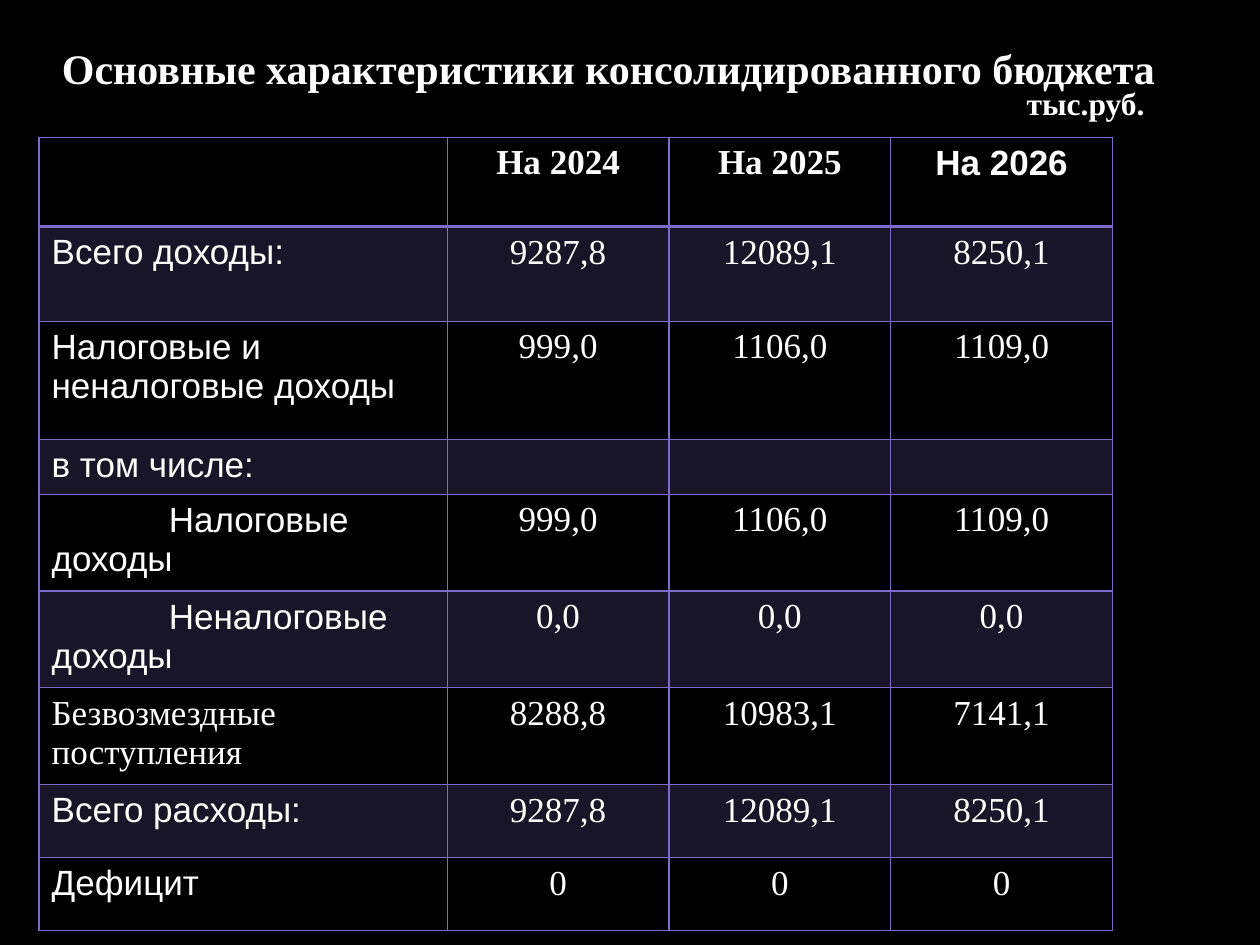
import lxml.etree
import pptx
import pptx.dml.color
import pptx.enum.text
import pptx.oxml.ns
import pptx.util
from pptx.util import Inches

TITLE = "Основные характеристики консолидированного бюджета"
UNIT = "тыс.руб."

SERIF, SANS = "Times New Roman", "Arial"
THEME = {
    "background": "000000",
    "text": "FFFFFF",
    "accent": "7E6BC9",
    "band_alpha": 20,
    "title_size": 24,
    "unit_size": 18,
    "table_size": 20,
}

HEADER = [("На 2024", SERIF), ("На 2025", SERIF), ("На 2026", SANS)]
# label, label font, first-line indent, row height, values by year
BUDGET = [
    ("Всего доходы:", SANS, 0, 0.75, ("9287,8", "12089,1", "8250,1")),
    ("Налоговые и неналоговые доходы", SANS, 0, 0.94, ("999,0", "1106,0", "1109,0")),
    ("в том числе:", SANS, 0, 0.41, ("", "", "")),
    ("Налоговые доходы", SANS, 0.93, 0.72, ("999,0", "1106,0", "1109,0")),
    ("Неналоговые доходы", SANS, 0.93, 0.72, ("0,0", "0,0", "0,0")),
    ("Безвозмездные поступления", SERIF, 0, 0.72, ("8288,8", "10983,1", "7141,1")),
    ("Всего расходы:", SANS, 0, 0.58, ("9287,8", "12089,1", "8250,1")),
    ("Дефицит", SANS, 0, 0.58, ("0", "0", "0")),
]
HEADER_HEIGHT = 0.71
COLUMN_WIDTHS = [3.24, 1.76, 1.76, 1.76]
TABLE_LEFT, TABLE_TOP = 0.31, 1.09

CENTER = pptx.enum.text.PP_ALIGN.CENTER
LEFT = pptx.enum.text.PP_ALIGN.LEFT


def color(name):
    return pptx.dml.color.RGBColor.from_string(THEME[name])


def write(frame, text, font_name, size, bold=False, align=LEFT):
    paragraph = frame.paragraphs[0]
    paragraph.text = text
    paragraph.alignment = align
    font = paragraph.font
    font.name, font.bold = font_name, bold
    font.size = pptx.util.Pt(THEME[size])
    font.color.rgb = color("text")
    return paragraph


def add_label(slide, box, text, size, align, anchor):
    frame = slide.shapes.add_textbox(*map(Inches, box)).text_frame
    frame.word_wrap = True
    frame.vertical_anchor = anchor
    write(frame, text, SERIF, size, True, align)


def add_element(parent, tag, **attributes):
    return lxml.etree.SubElement(parent, pptx.oxml.ns.qn(tag), attributes)


def set_borders(cell, top, bottom):
    """Draw all four sides; top and bottom are widths in points."""
    properties = cell._tc.get_or_add_tcPr()
    for side, width in (("L", 1), ("R", 1), ("T", top), ("B", bottom)):
        line = add_element(properties, f"a:ln{side}", w=str(pptx.util.Pt(width)))
        fill = add_element(line, "a:solidFill")
        add_element(fill, "a:srgbClr", val=THEME["accent"])


def set_band(cell, banded):
    if not banded:
        cell.fill.background()
        return
    cell.fill.solid()
    cell.fill.fore_color.rgb = color("accent")
    tint = cell._tc.tcPr.find(".//" + pptx.oxml.ns.qn("a:srgbClr") + "[last()]")
    tint = cell._tc.tcPr.find(pptx.oxml.ns.qn("a:solidFill"))[0]
    add_element(tint, "a:alpha", val=str(THEME["band_alpha"] * 1000))


def add_budget_table(slide):
    heights = [HEADER_HEIGHT] + [row[3] for row in BUDGET]
    box = (TABLE_LEFT, TABLE_TOP, sum(COLUMN_WIDTHS), sum(heights))
    table = slide.shapes.add_table(
        len(heights), len(COLUMN_WIDTHS), *map(Inches, box)).table
    table.first_row = table.horz_banding = False
    for column, width in zip(table.columns, COLUMN_WIDTHS):
        column.width = Inches(width)

    for index, height in enumerate(heights):
        table.rows[index].height = Inches(height)
        for cell in table.rows[index].cells:
            set_borders(cell, 2 if index == 1 else 1, 2 if index == 0 else 1)
            set_band(cell, index % 2 == 1)

    write(table.cell(0, 0).text_frame, "", SERIF, "table_size")
    for column, (year, font_name) in enumerate(HEADER, 1):
        write(table.cell(0, column).text_frame, year, font_name, "table_size", True, CENTER)
    for index, (label, font_name, indent, _, values) in enumerate(BUDGET, 1):
        paragraph = write(table.cell(index, 0).text_frame, label, font_name, "table_size")
        if indent:
            paragraph._p.get_or_add_pPr().set("indent", str(Inches(indent)))
        for column, value in enumerate(values, 1):
            write(table.cell(index, column).text_frame, value, SERIF, "table_size", align=CENTER)


def main():
    deck = pptx.Presentation()
    deck.slide_width, deck.slide_height = Inches(10), Inches(7.5)
    slide = deck.slides.add_slide(deck.slide_layouts[6])
    slide.background.fill.solid()
    slide.background.fill.fore_color.rgb = color("background")

    anchors = pptx.enum.text.MSO_ANCHOR
    add_label(slide, (0, 0, 9.66, 1.08), TITLE, "title_size", CENTER, anchors.MIDDLE)
    add_budget_table(slide)
    add_label(slide, (8.05, 0.62, 1.48, 0.4), UNIT, "unit_size", LEFT, anchors.TOP)
    deck.save("out.pptx")


if __name__ == "__main__":
    main()
